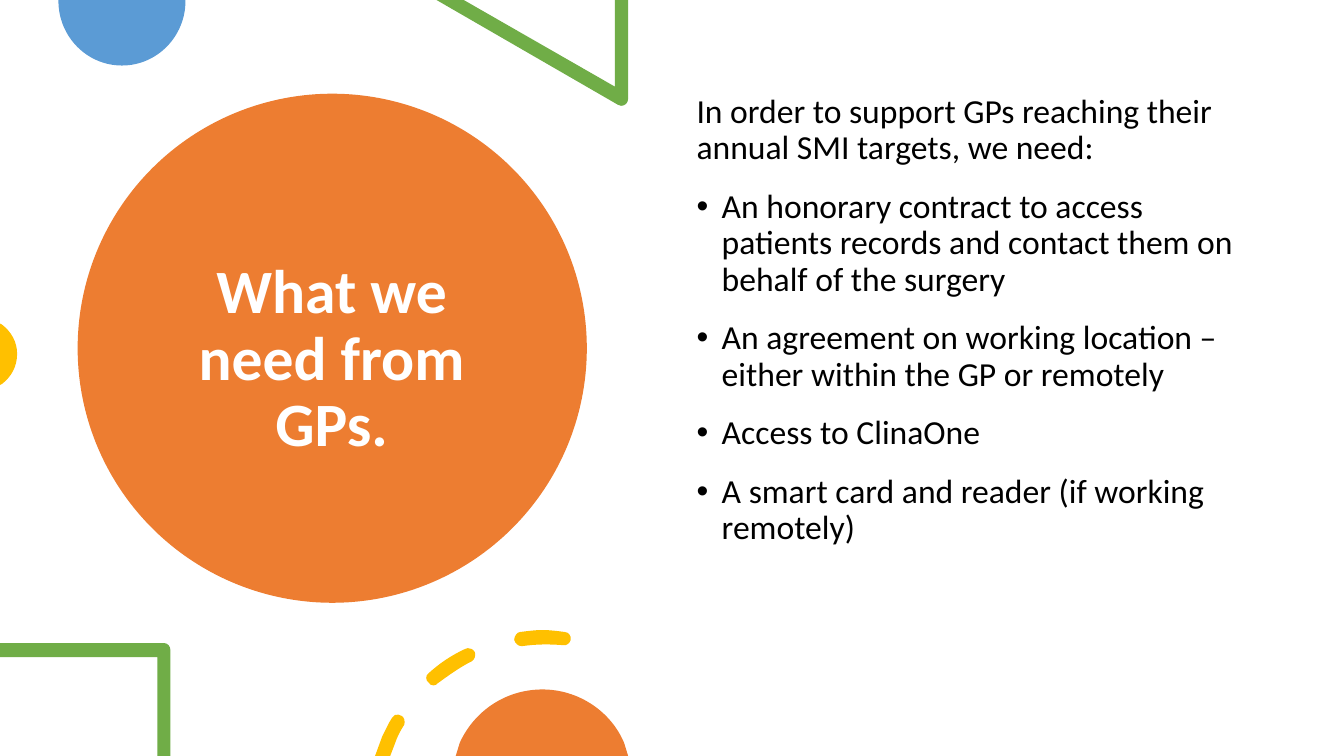
from lxml.etree import SubElement
from pptx import Presentation
from pptx.dml.color import RGBColor
from pptx.enum.shapes import MSO_SHAPE
from pptx.enum.text import MSO_ANCHOR, PP_ALIGN
from pptx.oxml.ns import qn
from pptx.util import Inches, Pt

THEME = {
    "orange": "ED7D31", "blue": "5B9BD5", "green": "70AD47", "yellow": "FFC000",
    "white": "FFFFFF", "black": "000000",
    "font": "Calibri", "title_size": 44, "body_size": 24,
}

TITLE = "What we need from GPs."
INTRO = "In order to support GPs reaching their annual SMI targets, we need:"
NEEDS = [
    "An honorary contract to access patients records and contact them on behalf of the surgery",
    "An agreement on working location – either within the GP or remotely",
    "Access to ClinaOne",
    "A smart card and reader (if working remotely)",
]

SLIDE_SIZE = (13.33, 7.5)
TITLE_CIRCLE = (0.77, 0.93, 5.05, 5.05)
TITLE_BOX = (1.52, 1.35, 3.54, 4.45)
BODY_BOX = (6.81, 0.89, 5.75, 5.86)
BULLET_INDENT = 0.25

# Each outline starts at a point; two numbers draw a line, six a Bezier curve.
BLUE_DISC = [(1.84, 0), (0.58, 0), (0.58, 0.01),
             (0.58, 0.36, 0.86, 0.65, 1.21, 0.65), (1.56, 0.65, 1.84, 0.36, 1.84, 0.01)]
GREEN_TRIANGLE = [(6.23, 0), (6.1, 0), (6.1, 0.86), (4.6, 0), (4.33, 0), (6.13, 1.04),
                  (6.14, 1.05, 6.15, 1.05, 6.16, 1.05), (6.2, 1.05, 6.23, 1.02, 6.23, 0.98)]
YELLOW_DISC = [(0, 3.21), (0, 3.82), (0.02, 3.81),
               (0.11, 3.74, 0.17, 3.64, 0.17, 3.51), (0.17, 3.39, 0.11, 3.29, 0.02, 3.22)]
GREEN_SQUARE = [(1.63, 6.38), (0, 6.38), (0, 6.52), (1.56, 6.52), (1.56, 7.5),
                (1.69, 7.5), (1.69, 6.45), (1.69, 6.41, 1.66, 6.38, 1.63, 6.38)]
LOW_DASH = [(3.95, 7.09), (3.93, 7.08, 3.9, 7.1, 3.89, 7.12),
            (3.85, 7.18, 3.82, 7.25, 3.79, 7.31), (3.72, 7.5), (3.87, 7.5), (3.92, 7.37),
            (3.94, 7.31, 3.97, 7.25, 4.01, 7.19), (4.02, 7.16, 4.01, 7.11, 3.98, 7.1),
            (3.97, 7.09, 3.96, 7.09, 3.95, 7.09)]
MIDDLE_DASH = [(4.64, 6.43), (4.63, 6.43, 4.62, 6.43, 4.61, 6.44),
               (4.48, 6.5, 4.36, 6.58, 4.25, 6.68), (4.22, 6.7, 4.22, 6.75, 4.25, 6.77),
               (4.26, 6.79, 4.28, 6.8, 4.3, 6.8), (4.32, 6.8, 4.33, 6.79, 4.34, 6.78),
               (4.45, 6.7, 4.56, 6.62, 4.68, 6.56), (4.71, 6.54, 4.72, 6.5, 4.71, 6.47),
               (4.69, 6.44, 4.67, 6.43, 4.64, 6.43)]
TOP_DASH = [(5.38, 6.25), (5.31, 6.25, 5.24, 6.26, 5.16, 6.27),
            (5.13, 6.27, 5.1, 6.31, 5.1, 6.35), (5.11, 6.38, 5.14, 6.41, 5.17, 6.41),
            (5.18, 6.41, 5.18, 6.41, 5.18, 6.41), (5.32, 6.39, 5.45, 6.39, 5.58, 6.4),
            (5.62, 6.41, 5.65, 6.38, 5.66, 6.35), (5.67, 6.31, 5.64, 6.27, 5.6, 6.27),
            (5.53, 6.26, 5.45, 6.25, 5.38, 6.25)]
ORANGE_DISC = [(5.38, 6.84), (5.01, 6.84, 4.7, 7.06, 4.56, 7.37), (4.52, 7.5),
               (6.23, 7.5), (6.19, 7.37), (6.06, 7.06, 5.74, 6.84, 5.38, 6.84)]

UPPER_DECORATIONS = [
    ("blue", [BLUE_DISC]),
    ("green", [GREEN_TRIANGLE]),
    ("yellow", [YELLOW_DISC]),
]
LOWER_DECORATIONS = [
    ("green", [GREEN_SQUARE]),
    ("yellow", [LOW_DASH, MIDDLE_DASH, TOP_DASH]),
    ("orange", [ORANGE_DISC]),
]


def color(name):
    return RGBColor.from_string(THEME[name])


def paint(shape, fill):
    shape.fill.solid()
    shape.fill.fore_color.rgb = color(fill)
    shape.line.fill.background()
    shape.shadow.inherit = False


def bend(shape, steps):
    """Turn the straight segments that stand for six-number steps into Bezier curves."""
    segments = list(shape._element.iter(qn("a:lnTo")))
    for segment, step in zip(segments, steps):
        if len(step) == 2:
            continue
        segment.tag = qn("a:cubicBezTo")
        for point in list(segment):
            segment.remove(point)
        for x, y in zip(step[::2], step[1::2]):
            point = SubElement(segment, qn("a:pt"))
            point.set("x", str(Inches(x) - shape.left))
            point.set("y", str(Inches(y) - shape.top))


def add_decorations(slide, decorations):
    for fill, outlines in decorations:
        contours = [[tuple(map(Inches, step[-2:])) for step in outline] for outline in outlines]
        builder = slide.shapes.build_freeform(*contours[0][0])
        for index, points in enumerate(contours):
            if index:
                builder.move_to(*points[0])
            builder.add_line_segments(points[1:], close=True)
        shape = builder.convert_to_shape()
        bend(shape, [step for outline in outlines for step in outline[1:]])
        paint(shape, fill)


def add_bullet(paragraph):
    properties = paragraph._p.get_or_add_pPr()
    properties.set("marL", str(Inches(BULLET_INDENT)))
    properties.set("indent", str(-Inches(BULLET_INDENT)))
    SubElement(properties, qn("a:buFont")).set("typeface", "Arial")
    SubElement(properties, qn("a:buChar")).set("char", "•")


def add_text(slide, box, lines, *, size, text_color, bold=False, align=PP_ALIGN.LEFT,
             anchor=MSO_ANCHOR.TOP, before=0, after=0, bullets_from=None):
    frame = slide.shapes.add_textbox(*map(Inches, box)).text_frame
    frame.word_wrap = True
    frame.vertical_anchor = anchor
    for index, line in enumerate(lines):
        paragraph = frame.add_paragraph() if index else frame.paragraphs[0]
        paragraph.alignment = align
        paragraph.line_spacing = 0.9
        paragraph.space_before = Pt(before)
        paragraph.space_after = Pt(after)
        if bullets_from is not None and index >= bullets_from:
            add_bullet(paragraph)
        run = paragraph.add_run()
        run.text = line
        run.font.name = THEME["font"]
        run.font.size = Pt(THEME[size])
        run.font.bold = bold
        run.font.color.rgb = color(text_color)


def main():
    presentation = Presentation()
    presentation.slide_width, presentation.slide_height = map(Inches, SLIDE_SIZE)
    slide = presentation.slides.add_slide(presentation.slide_layouts[6])
    slide.background.fill.solid()
    slide.background.fill.fore_color.rgb = color("white")

    circle = slide.shapes.add_shape(MSO_SHAPE.OVAL, *map(Inches, TITLE_CIRCLE))
    paint(circle, "orange")
    add_text(slide, TITLE_BOX, [TITLE], size="title_size", text_color="white", bold=True,
             align=PP_ALIGN.CENTER, anchor=MSO_ANCHOR.MIDDLE)
    add_decorations(slide, UPPER_DECORATIONS)
    add_text(slide, BODY_BOX, [INTRO, *NEEDS], size="body_size", text_color="black",
             before=10, after=6, bullets_from=1)
    add_decorations(slide, LOWER_DECORATIONS)
    presentation.save("out.pptx")


if __name__ == "__main__":
    main()
